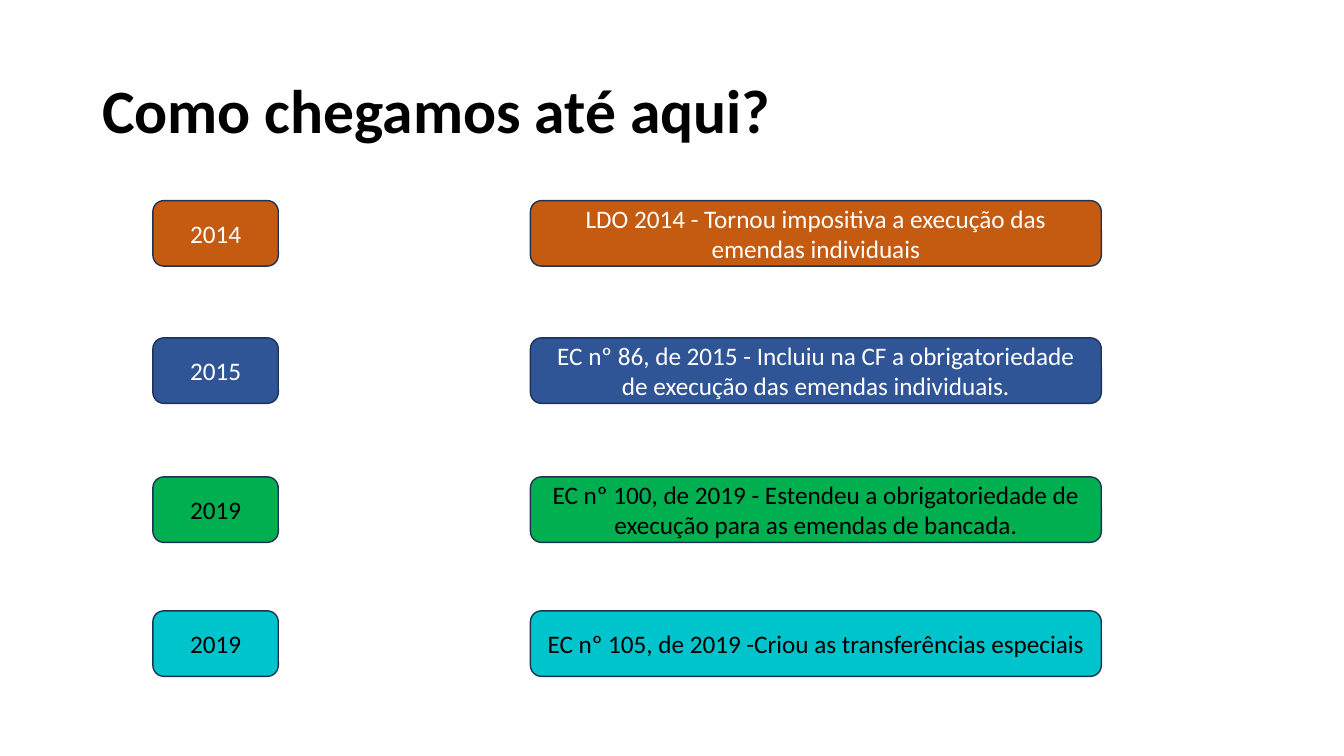
import pptx
import pptx.dml.color
import pptx.enum.shapes
import pptx.enum.text
import pptx.util

Pt = pptx.util.Pt
RGB = pptx.dml.color.RGBColor.from_string
ALIGN = pptx.enum.text.PP_ALIGN

COLORS = {
    "black": "000000",
    "white": "FFFFFF",
    "outline": "1E3256",
    "orange": "C55A11",
    "blue": "2F5597",
    "green": "00B050",
    "turquoise": "00C4CC",
}


def write(shape, text, size=18, color="black", bold=False, align=ALIGN.CENTER, spacing=1.0):
    frame = shape.text_frame
    frame.word_wrap = True
    frame.vertical_anchor = pptx.enum.text.MSO_ANCHOR.MIDDLE
    paragraph = frame.paragraphs[0]
    paragraph.alignment = align
    paragraph.line_spacing = spacing
    run = paragraph.add_run()
    run.text = text
    run.font.name = "Calibri"
    run.font.size = Pt(size)
    run.font.bold = bold
    run.font.color.rgb = RGB(COLORS[color])


deck = pptx.Presentation()
deck.slide_width = Pt(960)
deck.slide_height = Pt(540)
slide = deck.slides.add_slide(deck.slide_layouts[6])

title = slide.shapes.add_textbox(Pt(66), Pt(28.8), Pt(828), Pt(104.4))
write(title, "Como chegamos até aqui?", size=44, bold=True, align=ALIGN.LEFT, spacing=0.9)

# Top, year, milestone, fill, text colour
milestones = [
    (143.3, "2014", "LDO 2014 - Tornou impositiva a execução das emendas individuais",
     "orange", "white"),
    (241.3, "2015", "EC nº 86, de 2015 - Incluiu na CF a obrigatoriedade de execução "
     "das emendas individuais.", "blue", "white"),
    (340.6, "2019", "EC nº 100, de 2019 - Estendeu a obrigatoriedade de execução "
     "para as emendas de bancada.", "green", "black"),
    (436.3, "2019", "EC nº 105, de 2019 -Criou as transferências especiais",
     "turquoise", "black"),
]
YEAR_COLUMN = (109.2, 89.6)
MILESTONE_COLUMN = (378.9, 407.8)
BOX_HEIGHT = 46.8

for top, year, milestone, fill, text_color in milestones:
    for (left, width), text in ((YEAR_COLUMN, year), (MILESTONE_COLUMN, milestone)):
        box = slide.shapes.add_shape(
            pptx.enum.shapes.MSO_SHAPE.ROUNDED_RECTANGLE,
            Pt(left), Pt(top), Pt(width), Pt(BOX_HEIGHT))
        box.shadow.inherit = False
        box.fill.solid()
        box.fill.fore_color.rgb = RGB(COLORS[fill])
        box.line.color.rgb = RGB(COLORS["outline"])
        box.line.width = Pt(1)
        write(box, text, color=text_color)

deck.save("out.pptx")
